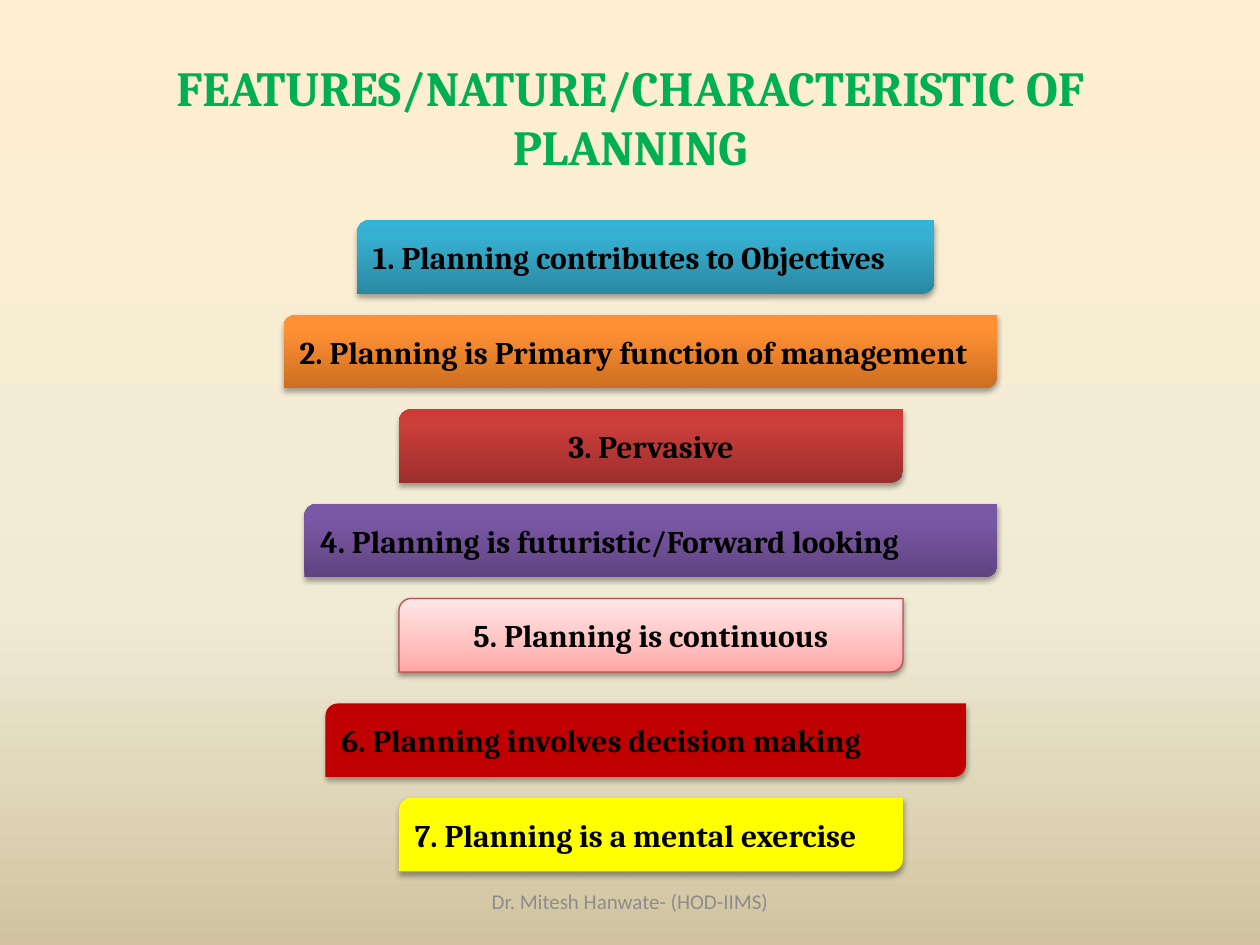
import lxml.etree
import pptx
import pptx.dml.color
import pptx.enum.shapes
import pptx.enum.text
import pptx.oxml.ns
import pptx.util
from dataclasses import dataclass

ALIGN = pptx.enum.text.PP_ALIGN
CELL = 1 / 12  # grid unit in inches: the slide is 120 columns by 90 rows


@dataclass(frozen=True)
class Theme:
    background: tuple = ((0, "FFEFD1"), (65, "F0EBD5"), (100, "D1C39F"))
    blue: tuple = ((0, "2A88A2"), (80, "37B1D2"), (100, "34B4D6"))
    orange: tuple = ((0, "CC6E20"), (80, "FF9034"), (100, "FF9136"))
    brick: tuple = ((0, "9C2F2D"), (80, "CB3E3A"), (100, "CE3B37"))
    purple: tuple = ((0, "5F4480"), (80, "7B58A6"), (100, "7C57A8"))
    pink: tuple = ((0, "FFA6A5"), (35, "FFC0BF"), (100, "FFE7E7"))
    red: str = "C00000"
    yellow: str = "FFFF00"
    pink_outline: str = "BF4C48"
    title: tuple = ("Cambria", 28, True, "00B050")
    feature: tuple = ("Cambria", 18, True, "000000")
    footer: tuple = ("Calibri", 12, False, "8C8C8C")


THEME = Theme()
FIRST_ROW, ROW_STEP, BAR_ROWS = 21, 9, 7

# text, left column, columns wide, fill, outline, alignment
FEATURES = [
    ("1. Planning contributes to Objectives", 34, 55, THEME.blue, None, ALIGN.LEFT),
    ("2. Planning is Primary function of management", 27, 68, THEME.orange, None, ALIGN.LEFT),
    ("3. Pervasive", 38, 48, THEME.brick, None, ALIGN.CENTER),
    ("4. Planning is futuristic/Forward looking", 29, 66, THEME.purple, None, ALIGN.LEFT),
    ("5. Planning is continuous", 38, 48, THEME.pink, THEME.pink_outline, ALIGN.CENTER),
    ("6. Planning involves decision making", 31, 61, THEME.red, None, ALIGN.LEFT),
    ("7. Planning is a mental exercise", 38, 48, THEME.yellow, None, ALIGN.LEFT),
]


def color(value):
    return pptx.dml.color.RGBColor.from_string(value)


def grid(*cells):
    return [pptx.util.Inches(cell * CELL) for cell in cells]


def add_xml(parent, tag, **attributes):
    return lxml.etree.SubElement(parent, pptx.oxml.ns.qn(tag), attributes)


def set_gradient(owner, fill, stops, angle):
    """Fill with any number of stops; the angle runs counter-clockwise."""
    fill.gradient()
    fill.gradient_angle = angle
    stop_list = owner.element.find(".//" + pptx.oxml.ns.qn("a:gsLst"))
    stop_list.clear()
    for position, value in stops:
        stop = add_xml(stop_list, "a:gs", pos=str(position * 1000))
        add_xml(stop, "a:srgbClr", val=value)


def set_shadow(shape, alpha, distance):
    shape.shadow.inherit = False
    effects = shape.element.spPr.find(pptx.oxml.ns.qn("a:effectLst"))
    shadow = add_xml(effects, "a:outerShdw", blurRad=str(pptx.util.Pt(3.1)),
                     dist=str(pptx.util.Pt(distance)), dir="5400000", rotWithShape="0")
    black = add_xml(shadow, "a:srgbClr", val="000000")
    add_xml(black, "a:alpha", val=str(alpha * 1000))


def write_text(shape, text, style, alignment):
    frame = shape.text_frame
    frame.word_wrap = True
    frame.vertical_anchor = pptx.enum.text.MSO_ANCHOR.MIDDLE
    paragraph = frame.paragraphs[0]
    paragraph.alignment = alignment
    run = paragraph.add_run()
    run.text = text
    name, size, bold, text_color = style
    formats = {"name": name, "size": pptx.util.Pt(size), "bold": bold}
    for attribute, value in formats.items():
        setattr(run.font, attribute, value)
    run.font.color.rgb = color(text_color)


def add_label(slide, cells, text, style):
    box = slide.shapes.add_textbox(*grid(*cells))
    write_text(box, text, style, ALIGN.CENTER)


def add_feature(slide, row, text, column, columns, fill, outline, alignment):
    bar = slide.shapes.add_shape(
        pptx.enum.shapes.MSO_SHAPE.ROUND_2_DIAG_RECTANGLE,
        *grid(column, row, columns, BAR_ROWS))
    if isinstance(fill, str):
        bar.fill.solid()
        bar.fill.fore_color.rgb = color(fill)
    else:
        set_gradient(bar, bar.fill, fill, 90)
    if outline:
        bar.line.color.rgb = color(outline)
        bar.line.width = pptx.util.Pt(0.75)
        set_shadow(bar, 38, 1.6)
    else:
        bar.line.fill.background()
        set_shadow(bar, 35, 1.8)
    write_text(bar, text, THEME.feature, alignment)


def main():
    presentation = pptx.Presentation()
    presentation.slide_width, presentation.slide_height = grid(120, 90)
    slide = presentation.slides.add_slide(presentation.slide_layouts[6])
    set_gradient(slide, slide.background.fill, THEME.background, 270)

    # Title and footer
    add_label(slide, (6, 3.6, 108, 15),
              "FEATURES/NATURE/CHARACTERISTIC OF PLANNING", THEME.title)
    add_label(slide, (41, 83.4, 38, 4.8),
              "Dr. Mitesh Hanwate- (HOD-IIMS)", THEME.footer)

    # Feature bars, with one extra row of space before the last two
    for index, feature in enumerate(FEATURES):
        row = FIRST_ROW + index * ROW_STEP + (index >= 5)
        add_feature(slide, row, *feature)

    presentation.save("out.pptx")


if __name__ == "__main__":
    main()
